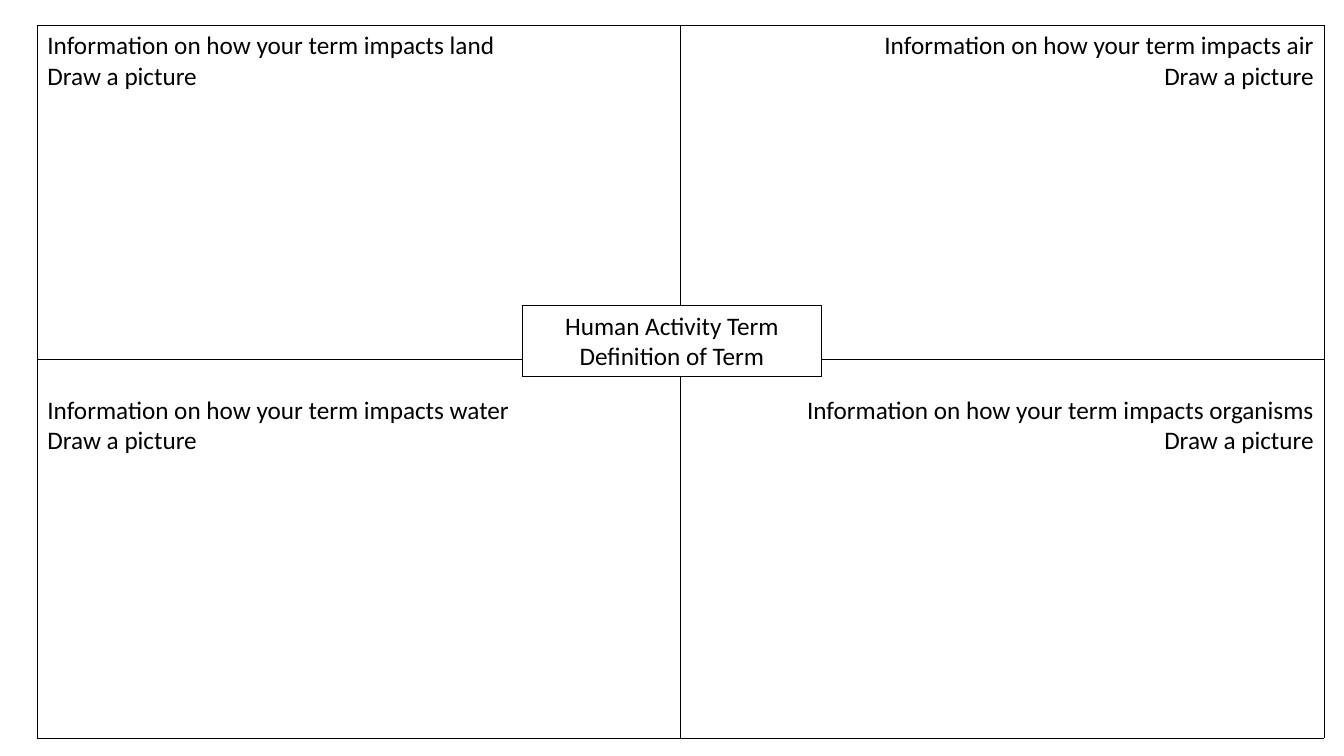
import pptx
import pptx.dml.color
import pptx.enum.shapes
import pptx.enum.text
import pptx.oxml
import pptx.oxml.ns
import pptx.util
from pptx.util import Inches

COLORS = {"ink": "000000", "paper": "FFFFFF"}
TEXT_FORMAT = {"name": "Calibri", "size": pptx.util.Pt(18), "bold": False}
ALIGN = pptx.enum.text.PP_ALIGN

DRAW = "Draw a picture"
IMPACTS = [["land", "air"], ["water", "organisms"]]
COLUMN_ALIGNS = [ALIGN.LEFT, ALIGN.RIGHT]
COLUMN_WIDTH = 6.38
ROW_HEIGHTS = [3.31, 3.76]
TOP_MARGINS = [0.05, 0.36]  # the lower prompts clear the centre box


def rgb(name):
    return pptx.dml.color.RGBColor.from_string(COLORS[name])


def write_lines(frame, lines, align):
    frame.text = "\n".join(lines)
    for paragraph in frame.paragraphs:
        paragraph.alignment = align
        font = paragraph.runs[0].font
        font.color.rgb = rgb("ink")
        for attribute, value in TEXT_FORMAT.items():
            setattr(font, attribute, value)


def border_cell(cell, width):
    """Draw a solid line on all four sides; borders must precede the fill."""
    properties = cell._tc.get_or_add_tcPr()
    for index, side in enumerate("LRTB"):
        properties.insert(index, pptx.oxml.parse_xml(
            f'<a:ln{side} {pptx.oxml.ns.nsdecls("a")} w="{pptx.util.Pt(width)}">'
            f'<a:solidFill><a:srgbClr val="{COLORS["ink"]}"/></a:solidFill>'
            f'</a:ln{side}>'))


def add_quadrants(slide):
    grid = slide.shapes.add_table(
        2, 2, Inches(0.37), Inches(0.25),
        Inches(2 * COLUMN_WIDTH), Inches(sum(ROW_HEIGHTS))).table
    for column in grid.columns:
        column.width = Inches(COLUMN_WIDTH)
    for row, height, margin, topics in zip(grid.rows, ROW_HEIGHTS, TOP_MARGINS, IMPACTS):
        row.height = Inches(height)
        for cell, topic, align in zip(row.cells, topics, COLUMN_ALIGNS):
            cell.margin_top = Inches(margin)
            cell.fill.background()
            border_cell(cell, 0.5)
            prompt = f"Information on how your term impacts {topic}"
            write_lines(cell.text_frame, [prompt, DRAW], align)


def add_term_box(slide):
    term_box = slide.shapes.add_shape(
        pptx.enum.shapes.MSO_SHAPE.RECTANGLE,
        Inches(5.18), Inches(3.03), Inches(2.97), Inches(0.71))
    term_box.shadow.inherit = False
    term_box.fill.solid()
    term_box.fill.fore_color.rgb = rgb("paper")
    term_box.line.color.rgb = rgb("ink")
    term_box.line.width = pptx.util.Pt(0.75)
    frame = term_box.text_frame
    frame.word_wrap = True
    frame.vertical_anchor = pptx.enum.text.MSO_ANCHOR.TOP
    write_lines(frame, ["Human Activity Term", "Definition of Term"], ALIGN.CENTER)


def main():
    deck = pptx.Presentation()
    deck.slide_width, deck.slide_height = Inches(13.33), Inches(7.5)
    slide = deck.slides.add_slide(deck.slide_layouts[6])
    add_quadrants(slide)
    add_term_box(slide)
    deck.save("out.pptx")


if __name__ == "__main__":
    main()
